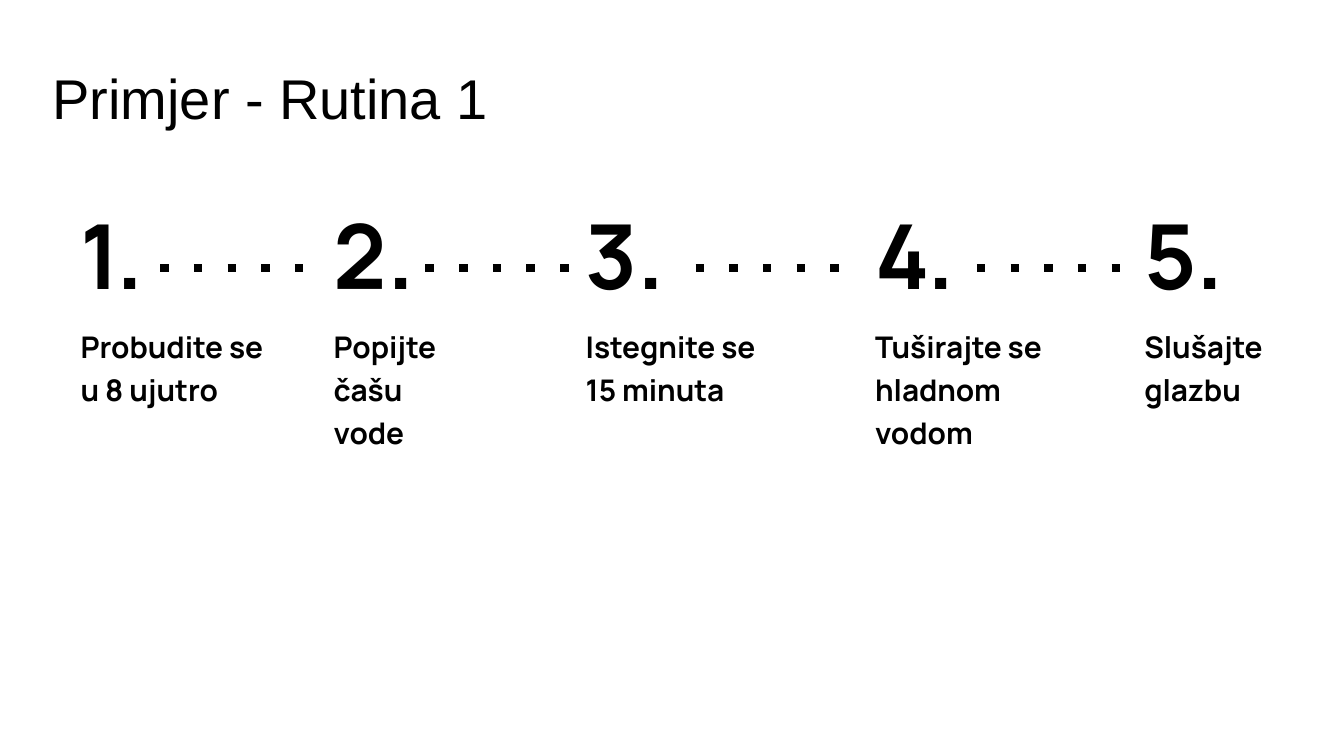
from dataclasses import dataclass

from lxml.etree import SubElement
from pptx import Presentation
from pptx.dml.color import RGBColor
from pptx.enum.dml import MSO_LINE_DASH_STYLE as Dash
from pptx.enum.shapes import MSO_CONNECTOR as Connector
from pptx.enum.text import MSO_ANCHOR as Anchor, MSO_AUTO_SIZE as AutoSize, PP_ALIGN as Align
from pptx.oxml.ns import qn
from pptx.slide import Slide
from pptx.util import Inches, Pt

WIDTH, HEIGHT = 13.33, 7.5
INK = "000000"
STEP_TOP, DOTS_Y, DOTS_LENGTH = 1.63, 2.66, 1.66
INSET, TOP_INSET = 0.13, 0.14


@dataclass(frozen=True)
class Step:
    left: float
    width: float
    height: float
    text: str


STEPS = (
    Step(0.67, 2.15, 2.47, "Probudite se u 8 ujutro"),
    Step(3.18, 1.65, 4.45, "Popijte čašu vode"),
    Step(5.68, 2.3, 2.9, "Istegnite se 15 minuta"),
    Step(8.55, 2.26, 2.47, "Tuširajte se hladnom vodom"),
    Step(11.22, 2.11, 2.47, "Slušajte glazbu"),
)
DOTS_LEFTS = (1.59, 4.22, 6.9, 9.69)


def color(value: str) -> RGBColor:
    return RGBColor.from_string(value)


def style_font(para, name: str, size: float, bold: bool) -> None:
    para.font.name = name
    para.font.size = Pt(size)
    para.font.bold = bold
    para.font.color.rgb = color(INK)


def add_title(page: Slide, text: str) -> None:
    title = page.shapes.title
    title.left, title.top = Inches(0.42), Inches(0.4)
    title.width, title.height = Inches(12.31), Inches(1.22)
    frame = title.text_frame
    frame.text = text
    frame.auto_size = AutoSize.NONE
    frame.vertical_anchor = Anchor.MIDDLE
    para = frame.paragraphs[0]
    para.alignment = Align.LEFT
    para.line_spacing = 0.9
    style_font(para, "Arial", 40, False)


def add_step(page: Slide, number: int, step: Step) -> None:
    box = page.shapes.add_textbox(
        Inches(step.left), Inches(STEP_TOP), Inches(step.width), Inches(step.height)
    )
    frame = box.text_frame
    frame.word_wrap = True
    frame.margin_left = frame.margin_right = frame.margin_bottom = Inches(INSET)
    frame.margin_top = Inches(TOP_INSET)
    frame.text = f"{number}.\n{step.text}"
    heading, label = frame.paragraphs
    heading.line_spacing = label.line_spacing = 1.2
    label.space_before = Pt(10)
    style_font(heading, "Manrope", 64, True)
    style_font(label, "Manrope", 21.3, True)


def add_dots(page: Slide, left: float) -> None:
    dots = page.shapes.add_connector(
        Connector.STRAIGHT,
        Inches(left), Inches(DOTS_Y), Inches(left + DOTS_LENGTH), Inches(DOTS_Y),
    )
    dots.line.color.rgb = color(INK)
    dots.line.width = Pt(6)
    dots.line.dash_style = Dash.ROUND_DOT
    properties = dots._element.spPr
    properties.find(".//" + qn("a:prstDash")).set("val", "dot")
    SubElement(properties, qn("a:effectLst"))


def main() -> None:
    deck = Presentation()
    deck.slide_width, deck.slide_height = Inches(WIDTH), Inches(HEIGHT)
    page = deck.slides.add_slide(deck.slide_layouts.get_by_name("Title Only"))
    page.background.fill.solid()
    page.background.fill.fore_color.rgb = color("FFFFFF")
    add_title(page, "Primjer - Rutina 1")
    for number, step in enumerate(STEPS, start=1):
        add_step(page, number, step)
    for left in DOTS_LEFTS:
        add_dots(page, left)
    deck.save("out.pptx")


if __name__ == "__main__":
    main()
